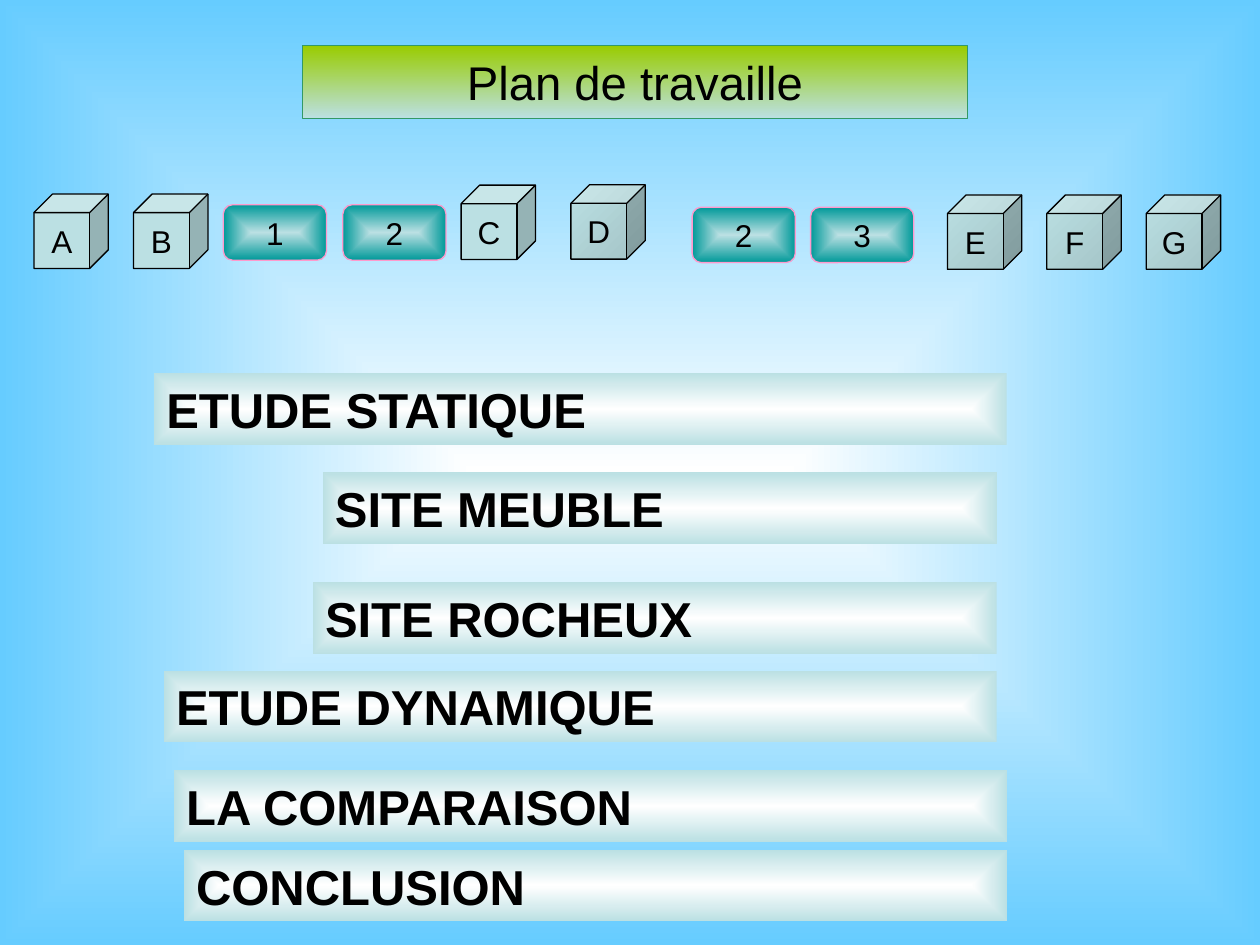
from lxml.etree import SubElement
from pptx import Presentation
from pptx.dml.color import RGBColor
from pptx.enum.shapes import MSO_SHAPE as Preset
from pptx.enum.text import MSO_ANCHOR as Anchor, PP_ALIGN as Align
from pptx.oxml.ns import qn
from pptx.util import Pt

TITLE = "Plan de travaille"
PALE, WHITE, BLACK = "BBE0E3", "FFFFFF", "000000"
CUBE_SIZE = 42.5
TILE_WIDTH, TILE_HEIGHT = 59, 31.7
BAR_HEIGHT = 41

PLAIN = (PALE,)
SHADED = (PALE, "A3C3C6", 45)
CUBES = [
    ("A", 19.4, 110.9, PLAIN),
    ("B", 76.3, 110.9, PLAIN),
    ("C", 263.5, 105.8, PLAIN),
    ("D", 326.2, 105.6, SHADED),
    ("E", 541.4, 111.4, SHADED),
    ("F", 598.2, 111.4, SHADED),
    ("G", 655, 111.4, SHADED),
]
TILES = [
    ("1", 127.6, 117),
    ("2", 195.9, 117),
    ("2", 395.5, 118.4),
    ("3", 463.2, 118.4),
]
BARS = [
    ("ETUDE STATIQUE", 88, 575.3, 213.1),
    ("SITE MEUBLE", 184.3, 569.6, 270),
    ("SITE ROCHEUX", 178.7, 569.6, 332.6),
    ("ETUDE DYNAMIQUE", 93.6, 569.6, 383.2),
    ("LA COMPARAISON", 99.3, 575.6, 440),
    ("CONCLUSION", 105, 575.6, 485.5),
]


def color(value):
    return RGBColor.from_string(value)


def paint(fill, element, start, end=None, angle=None):
    if end is None:
        fill.solid()
        fill.fore_color.rgb = color(start)
        return
    fill.gradient()
    for stop, value in zip(fill.gradient_stops, (start, end)):
        stop.color.rgb = color(value)
    if angle is not None:
        fill.gradient_angle = 360 - angle
        return
    gradient = next(element.iter(qn("a:gradFill")))
    gradient.remove(gradient.find(qn("a:lin")))
    center = SubElement(gradient, qn("a:path"), path="shape")
    SubElement(center, qn("a:fillToRect"),
               {side: "50000" for side in "ltrb"})


def add_box(slide, preset, text, box, fill, line=None, size=18,
            align=Align.CENTER, bold=False):
    shape = slide.shapes.add_shape(preset, *map(Pt, box))
    shape.shadow.inherit = False
    paint(shape.fill, shape.element, *fill)
    if line:
        shape.line.color.rgb = color(line)
        shape.line.width = Pt(0.75)
    else:
        shape.line.fill.background()
    frame = shape.text_frame
    frame.word_wrap = True
    frame.vertical_anchor = Anchor.MIDDLE
    paragraph = frame.paragraphs[0]
    paragraph.text = text
    paragraph.alignment = align
    font = paragraph.font
    font.name, font.size, font.bold = "Arial", Pt(size), bold
    font.color.rgb = color(BLACK)


def main():
    presentation = Presentation()
    presentation.slide_width, presentation.slide_height = Pt(720), Pt(540)
    slide = presentation.slides.add_slide(presentation.slide_layouts[6])
    paint(slide.background.fill, slide.element, WHITE, "66CCFF")

    add_box(slide, Preset.RECTANGLE, TITLE, (172.8, 26, 380, 41.7),
            ("99CC00", PALE, 90), "339966", size=27)
    for text, left, top, fill in CUBES:
        add_box(slide, Preset.CUBE, text, (left, top, CUBE_SIZE, CUBE_SIZE),
                fill, BLACK)
    for text, left, top in TILES:
        add_box(slide, Preset.ROUNDED_RECTANGLE, text,
                (left, top, TILE_WIDTH, TILE_HEIGHT),
                (PALE, "009999"), "FF99CC")
    for text, left, right, top in BARS:
        add_box(slide, Preset.RECTANGLE, text,
                (left, top, right - left, BAR_HEIGHT), (WHITE, PALE),
                size=28, align=Align.LEFT, bold=True)

    presentation.save("out.pptx")


if __name__ == "__main__":
    main()
